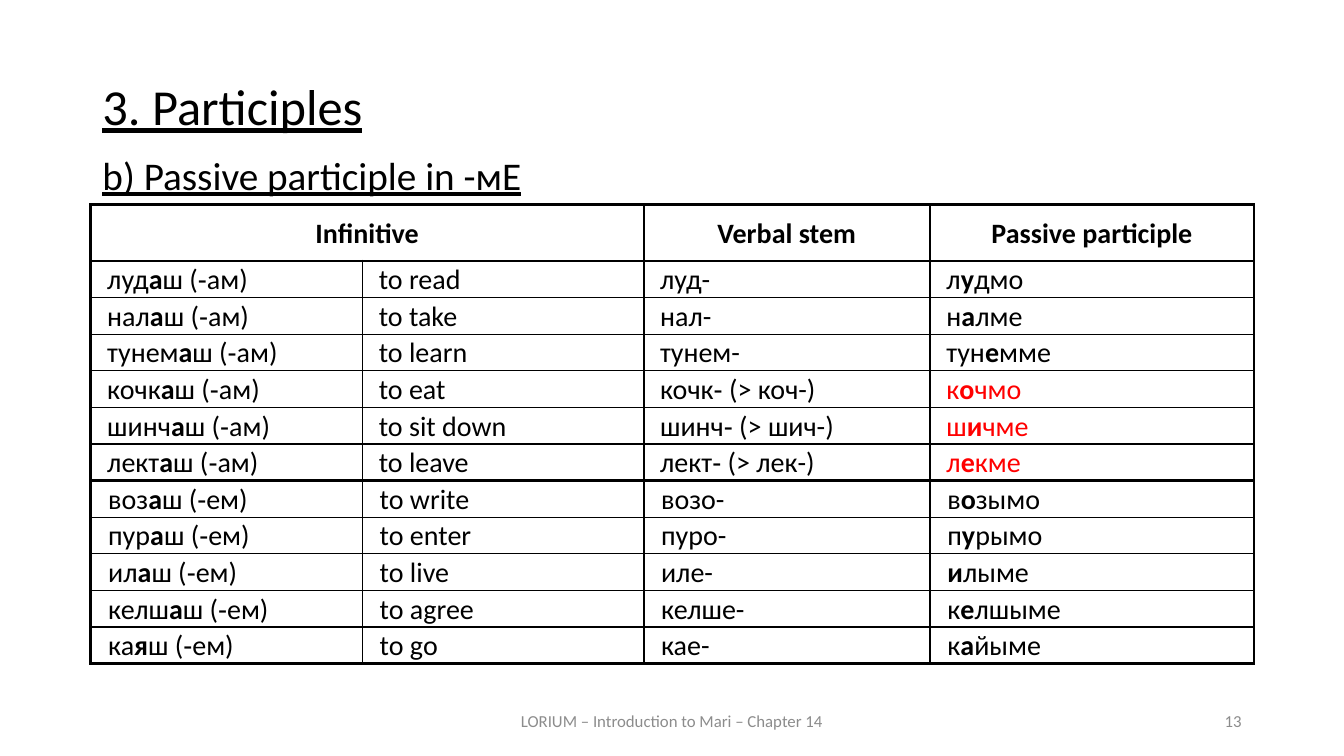
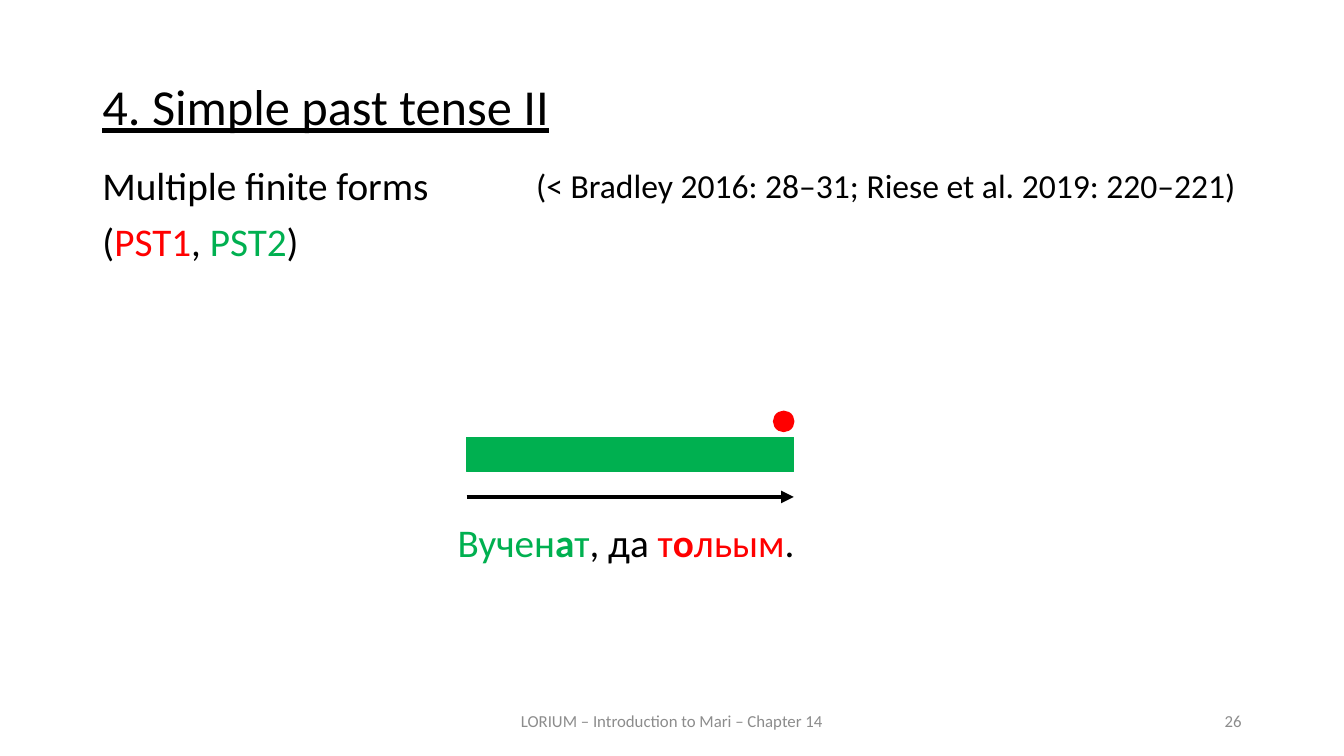
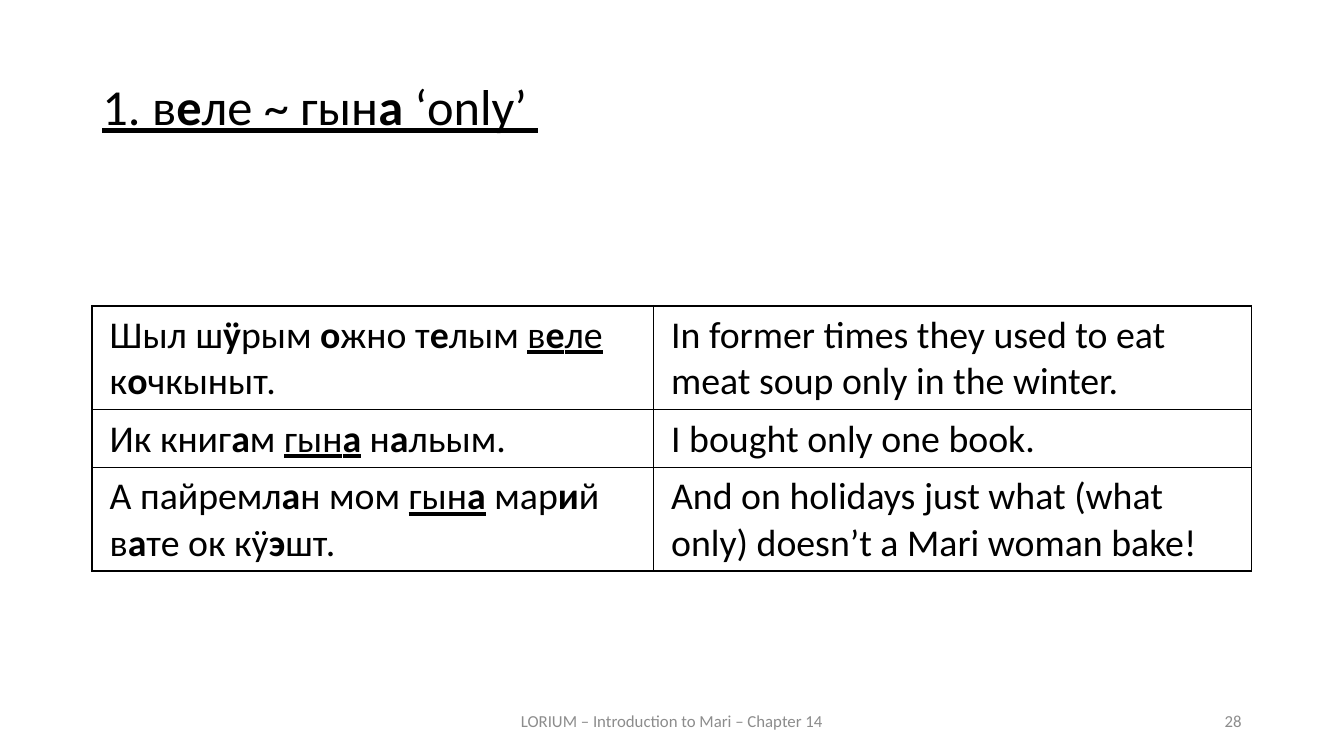
"""Build three slides of a Mari grammar course."""
from dataclasses import dataclass

from lxml.etree import SubElement as Sub
from pptx import Presentation
from pptx.dml.color import RGBColor as RGB
from pptx.enum.shapes import MSO_CONNECTOR as LINK, MSO_SHAPE as FORM
from pptx.enum.text import MSO_ANCHOR as ANCHOR, MSO_AUTO_SIZE as FIT, PP_ALIGN as ALIGN
from pptx.oxml.ns import qn
from pptx.util import Pt


@dataclass(frozen=True)
class Theme:
    font: str = "Calibri"
    ink: str = "000000"
    red: str = "FF0000"
    green: str = "00B050"
    grey: str = "8C8C8C"
    title: float = 36
    body: float = 28
    quote: float = 27
    cite: float = 24
    grid: float = 20
    foot: float = 12


T = Theme()
HEAD = {"line_spacing": 0.9, "space_before": Pt(12), "alignment": ALIGN.JUSTIFY}
LIST = {"line_spacing": 0.9, "space_before": Pt(10)}
MID = {"alignment": ALIGN.CENTER}
FOOT = "LORIUM – Introduction to Mari – Chapter 14"
TINTS = {"^": T.red, "+": T.green}

VERBS = [
    ["*Infinitive*", "", "*Verbal stem*", "*Passive participle*"],
    ["луд*а*ш (‑ам)", "to read", "луд-", "л*у*дмо"],
    ["нал*а*ш (‑ам)", "to take", "нал-", "н*а*лме"],
    ["тунем*а*ш (‑ам)", "to learn", "тунем-", "тун*е*мме"],
    ["кочк*а*ш (‑ам)", "to eat", "кочк‑ (> коч-)", "^к*о*чмо"],
    ["шинч*а*ш (‑ам)", "to sit down", "шинч‑ (> шич-)", "^ш*и*чме"],
    ["лект*а*ш (‑ам)", "to leave", "лект‑ (> лек-)", "^л*е*кме"],
    ["воз*а*ш (‑ем)", "to write", "возо-", "в*о*зымо"],
    ["пур*а*ш (‑ем)", "to enter", "пуро-", "п*у*рымо"],
    ["ил*а*ш (‑ем)", "to live", "иле-", "*и*лыме"],
    ["келш*а*ш (‑ем)", "to agree", "келше-", "к*е*лшыме"],
    ["ка*я*ш (‑ем)", "to go", "кае-", "к*а*йыме"],
]
ONLY = [
    ["Шыл ш*ӱ*рым *о*жно т*е*лым _в*е*ле_ к*о*чкыныт.",
     "In former times they used to eat meat soup only in the winter."],
    ["Ик книг*а*м _гын*а*_ н*а*льым.", "I bought only one book."],
    ["А пайремл*а*н мом _гын*а*_ мар*и*й в*а*те ок кӱ*э*шт.",
     "And on holidays just what (what only) doesn’t a Mari woman bake!"],
]


def put(obj, fmt):
    for name, value in fmt.items():
        setattr(obj, name, value)


def split(text):
    marks, part = set(), ""
    for char in text:
        if char in "*_^+":
            if part:
                yield part, frozenset(marks)
            marks ^= {char}
            part = ""
        else:
            part += char
    if part:
        yield part, frozenset(marks)


def write(frame, lines, size, look, ink=T.ink):
    for i, line in enumerate(lines):
        para = frame.paragraphs[0] if i == 0 else frame.add_paragraph()
        put(para, look)
        for part, marks in split(line):
            run = para.add_run()
            run.text = part
            put(run.font, {"name": T.font, "size": Pt(size),
                           "bold": "*" in marks, "underline": "_" in marks})
            tint = next((TINTS[m] for m in marks if m in TINTS), ink)
            run.font.color.rgb = RGB.from_string(tint)


def place(shape, box):
    put(shape, dict(zip(("left", "top", "width", "height"), map(Pt, box))))


def fill_in(holder, box, lines, size, look, anchor=ANCHOR.TOP):
    place(holder, box)
    frame = holder.text_frame
    put(frame, {"auto_size": FIT.NONE, "word_wrap": True, "vertical_anchor": anchor})
    write(frame, lines, size, look)


def bare(holder):
    for para in holder.text_frame.paragraphs:
        props = para._p.get_or_add_pPr()
        props.set("marL", "0")
        props.set("indent", "0")
        Sub(props, qn("a:buNone"))


def label(slide, box, text, size, look, anchor=ANCHOR.TOP, ink=T.ink):
    frame = slide.shapes.add_textbox(*map(Pt, box)).text_frame
    put(frame, {"word_wrap": True, "vertical_anchor": anchor})
    write(frame, [text], size, look, ink)


def page(deck, layout, title, number):
    slide = deck.slides.add_slide(deck.slide_layouts[layout])
    fill_in(slide.shapes.title, (66, 54.7, 828, 60), [title], T.title, HEAD)
    label(slide, (318, 500.5, 324, 28.8), FOOT, T.foot, MID, ANCHOR.MIDDLE, T.grey)
    label(slide, (678, 500.5, 216, 28.8), str(number), T.foot,
          {"alignment": ALIGN.RIGHT}, ANCHOR.MIDDLE, T.grey)
    return slide


def points(slide, box, lines, anchor=ANCHOR.TOP):
    body = slide.placeholders[1]
    fill_in(body, box, lines, T.body, LIST, anchor)
    bare(body)


def edge(cell, widths):
    props = cell._tc.get_or_add_tcPr()
    for side, width in zip("LRTB", widths):
        line = Sub(props, qn(f"a:ln{side}"), w=str(Pt(width)))
        Sub(Sub(line, qn("a:solidFill")), qn("a:srgbClr"), val=T.ink)


def grid(slide, spot, cols, rows, data, size, rules, pads, looks, anchors, merge=()):
    box = (*spot, sum(cols), sum(rows))
    table = slide.shapes.add_table(len(rows), len(cols), *map(Pt, box)).table
    put(table, {"first_row": False, "horz_banding": False})
    for col, width in zip(table.columns, cols):
        col.width = Pt(width)
    for row, height in zip(table.rows, rows):
        row.height = Pt(height)
    for start, end in merge:
        table.cell(*start).merge(table.cell(*end))
    down, across = rules
    for r, line in enumerate(data):
        for c, text in enumerate(line):
            cell = table.cell(r, c)
            if cell.is_spanned:
                continue
            put(cell, {"margin_left": Pt(pads[r]), "margin_right": Pt(pads[r]),
                       "margin_top": Pt(1.4), "margin_bottom": 0,
                       "vertical_anchor": anchors[r]})
            edge(cell, (down[c], down[c + cell.span_width], across[r], across[r + 1]))
            cell.fill.background()
            write(cell.text_frame, [text], size, looks[r])


def solid(slide, form, box, tint):
    shape = slide.shapes.add_shape(form, *map(Pt, box))
    shape.shadow.inherit = False
    color = RGB.from_string(tint)
    shape.fill.solid()
    shape.fill.fore_color.rgb = color
    shape.line.color.rgb = color
    shape.line.width = Pt(1)


def arrow(slide, ends, width):
    link = slide.shapes.add_connector(LINK.STRAIGHT, *map(Pt, ends))
    link.line.color.rgb = RGB.from_string(T.ink)
    link.line.width = Pt(width)
    props = link._element.spPr
    Sub(props.find(qn("a:ln")), qn("a:tailEnd"), type="triangle")
    Sub(props, qn("a:effectLst"))


def verbs(deck):
    slide = page(deck, 1, "_3. Participles", 13)
    points(slide, (66, 108, 828, 41.8), ["_b) Passive participle in -мЕ"])
    count = len(VERBS) - 1
    across = [2.25 if i in (0, 1, 7, 12) else 1 for i in range(count + 2)]
    grid(slide, (64.8, 146.2), [194, 201, 204.5, 231.5], [40.3] + [26.15] * count,
         VERBS, T.grid, ([2.25, 1, 1.5, 1.5, 2.25], across),
         [11.8] * 7 + [12.5] * 5, [MID] + [{"alignment": ALIGN.JUSTIFY}] * count,
         [ANCHOR.MIDDLE] + [ANCHOR.TOP] * count, [((0, 0), (0, 1))])


def tense(deck):
    slide = page(deck, 1, "_4. Simple past tense II", 26)
    points(slide, (66, 114.5, 306, 79.2),
           ["Multiple finite forms", "(^PST1^, +PST2+)"], ANCHOR.MIDDLE)
    label(slide, (333.4, 114.5, 599, 36),
          "(< Bradley 2016: 28–31; Riese et al. 2019: 220–221)", T.cite, MID)
    label(slide, (97.2, 370.8, 706.3, 54.7),
          "+Вучен*а*т+, да ^т*о*льым^. ", T.body, {**LIST, **MID})
    left, wide, dot = 333.4, 233.6, 14.4
    solid(slide, FORM.RECTANGLE, (left, 312.5, wide, 24.5), T.green)
    solid(slide, FORM.OVAL, (left + wide - dot, 293.8, dot, dot), T.red)
    arrow(slide, (left, 355, left + wide, 355), 3)


def only(deck):
    slide = page(deck, 5, "_1. в*е*ле ~ гын*а* ‘only’ ", 28)
    grid(slide, (66, 218.4), [401, 427], [74, 41.4, 74], ONLY, T.quote,
         ([1.5, 1, 1.5], [1.5, 1, 1, 1.5]), [12.4] * 3,
         [{"alignment": ALIGN.LEFT}] * 3, [ANCHOR.MIDDLE] * 3)


def main():
    deck = Presentation()
    put(deck, {"slide_width": Pt(960), "slide_height": Pt(540)})
    for build in (verbs, tense, only):
        build(deck)
    deck.save("out.pptx")


if __name__ == "__main__":
    main()
